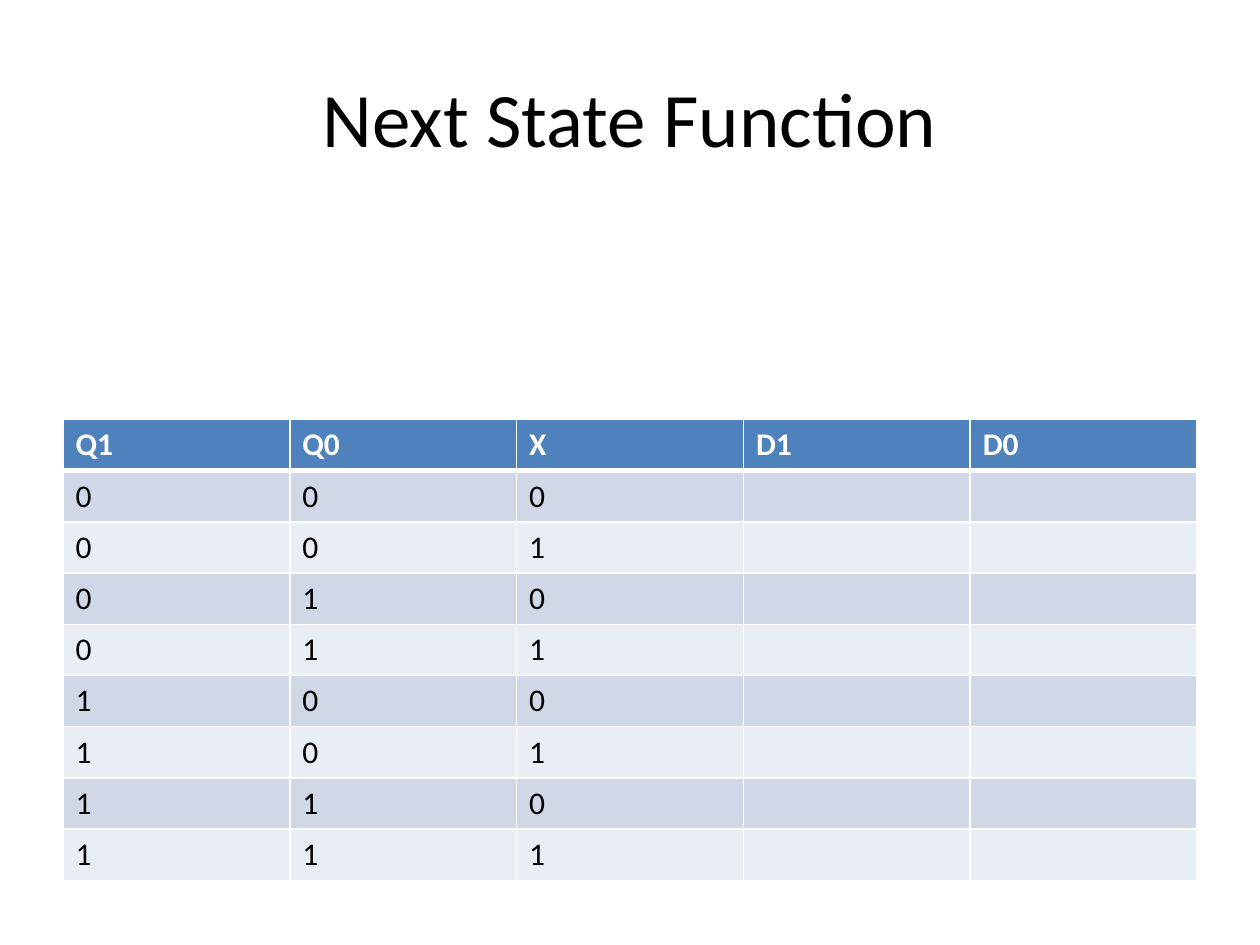
from itertools import product

from lxml.etree import SubElement
from pptx import Presentation
from pptx.dml.color import RGBColor
from pptx.enum.text import MSO_ANCHOR, PP_ALIGN
from pptx.oxml.ns import qn
from pptx.util import Inches, Pt

TITLE = "Next State Function"
HEADS = ["Q1", "Q0", "X", "D1", "D0"]
INPUTS = 3
BLANKS = [""] * (len(HEADS) - INPUTS)
ROWS = [HEADS] + [list(bits) + BLANKS for bits in product("01", repeat=INPUTS)]

FONT = "Calibri"
COLORS = {
    "head": "4F81BD",
    "odd": "D0D8E8",
    "even": "E9EDF4",
    "line": "FFFFFF",
    "light": "FFFFFF",
    "dark": "000000",
}


def style(paragraph, size, color, bold=False):
    for run in paragraph.runs:
        run.font.name = FONT
        run.font.size = Pt(size)
        run.font.bold = bold
        run.font.color.rgb = RGBColor.from_string(COLORS[color])


def border(cell, widths):
    """Draw cell edges; widths maps L, R, T, B to points, in that order."""
    props = cell._tc.get_or_add_tcPr()
    for side, width in widths.items():
        line = SubElement(props, qn(f"a:ln{side}"), w=str(Pt(width)))
        fill = SubElement(line, qn("a:solidFill"))
        SubElement(fill, qn("a:srgbClr"), val=COLORS["line"])


def add_title(slide):
    title = slide.shapes.title
    title.left, title.top = Inches(0.5), Inches(0.3)
    title.width, title.height = Inches(9), Inches(1.25)
    frame = title.text_frame
    frame.text = TITLE
    frame.vertical_anchor = MSO_ANCHOR.MIDDLE
    frame.paragraphs[0].alignment = PP_ALIGN.CENTER
    style(frame.paragraphs[0], 44, "dark")


def add_truth_table(slide):
    table = slide.shapes.add_table(
        len(ROWS), len(HEADS), Inches(0.5), Inches(3.33), Inches(9), Inches(3.66)
    ).table
    for r, row in enumerate(ROWS):
        head = r == 0
        band = "head" if head else "odd" if r % 2 else "even"
        widths = {"L": 1, "R": 1, "T": 3 if r == 1 else 1, "B": 3 if head else 1}
        for c, text in enumerate(row):
            cell = table.cell(r, c)
            border(cell, widths)
            cell.fill.solid()
            cell.fill.fore_color.rgb = RGBColor.from_string(COLORS[band])
            if text:
                cell.text_frame.text = text
                style(cell.text_frame.paragraphs[0], 18,
                      "light" if head else "dark", head)


def main():
    deck = Presentation()
    deck.slide_width, deck.slide_height = Inches(10), Inches(7.5)
    slide = deck.slides.add_slide(deck.slide_layouts[5])
    add_title(slide)
    add_truth_table(slide)
    deck.save("out.pptx")


if __name__ == "__main__":
    main()
